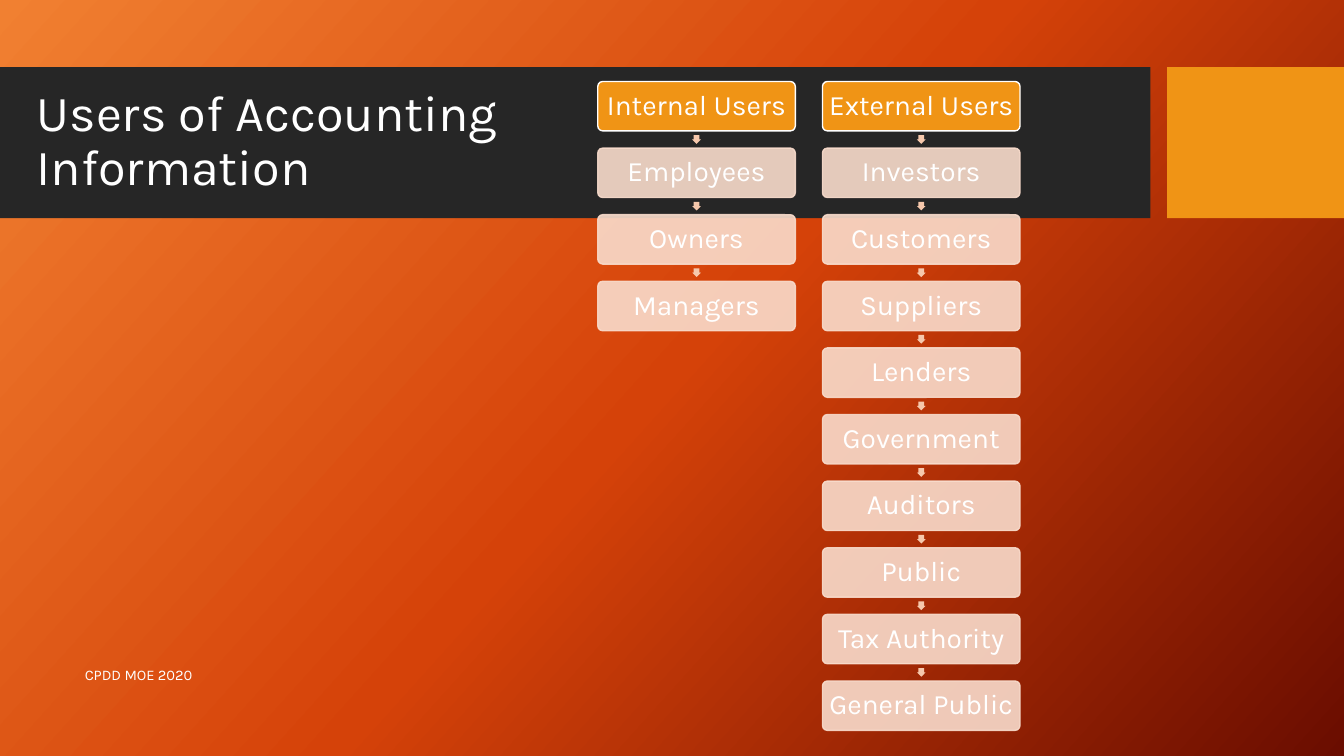
from lxml.etree import SubElement
from pptx import Presentation
from pptx.dml.color import RGBColor
from pptx.enum.shapes import MSO_SHAPE
from pptx.enum.text import MSO_ANCHOR, MSO_AUTO_SIZE, PP_ALIGN
from pptx.oxml.ns import qn
from pptx.util import Pt

WHITE = RGBColor(0xFF, 0xFF, 0xFF)
CHARCOAL = RGBColor(0x26, 0x26, 0x26)
AMBER = RGBColor(0xF0, 0x94, 0x15)
PEACH = RGBColor(0xF9, 0xDC, 0xCC)
ARROW_PEACH = RGBColor(0xF6, 0xC8, 0xAC)
BACKGROUND_STOPS = [
    (0, RGBColor(0xF1, 0x80, 0x31)),
    (50, RGBColor(0xD5, 0x42, 0x09)),
    (100, RGBColor(0x6A, 0x0D, 0x00)),
]

USERS = [
    ["Internal Users", "Employees", "Owners", "Managers"],
    ["External Users", "Investors", "Customers", "Suppliers", "Lenders",
     "Government", "Auditors", "Public", "Tax Authority", "General Public"],
]
COLUMN_LEFTS = [427, 587.5]
FIRST_TOP, PITCH = 58.2, 47.58
CARD_WIDTH, CARD_HEIGHT = 141.1, 35.3
ARROW_SIZE = 6.2


class SlideBuilder:
    """Holds the text style and the current slide."""

    font_name = "Karla"
    text_color = WHITE

    def __init__(self, slide):
        self.slide = slide

    def background(self, stops, angle):
        fill = self.slide.background.fill
        fill.gradient()
        fill.gradient_angle = angle
        stop_list = next(self.slide.element.iter(qn("a:gsLst")))
        stop_list.clear()
        for percent, color in stops:
            stop = SubElement(stop_list, qn("a:gs"), pos=str(percent * 1000))
            SubElement(stop, qn("a:srgbClr"), val=str(color))

    def set_text(self, shape, text, size, alignment, margins, line_spacing=None):
        frame = shape.text_frame
        side, edge = Pt(margins[0]), Pt(margins[1])
        frame_format = {
            "auto_size": MSO_AUTO_SIZE.NONE, "word_wrap": True,
            "vertical_anchor": MSO_ANCHOR.MIDDLE,
            "margin_left": side, "margin_right": side,
            "margin_top": edge, "margin_bottom": edge,
        }
        for name, value in frame_format.items():
            setattr(frame, name, value)
        paragraph = frame.paragraphs[0]
        paragraph.alignment = alignment
        paragraph.line_spacing = line_spacing
        run = paragraph.add_run()
        run.text = text
        for name, value in {"name": self.font_name, "size": Pt(size)}.items():
            setattr(run.font, name, value)
        run.font.color.rgb = self.text_color

    def title(self, text, left, top, width, height, size):
        shape = self.slide.shapes.title
        position = {"left": left, "top": top, "width": width, "height": height}
        for name, value in position.items():
            setattr(shape, name, Pt(value))
        self.set_text(shape, text, size, PP_ALIGN.LEFT, (7.2, 3.6), 0.9)

    def text(self, text, left, top, width, height, size):
        box = self.slide.shapes.add_textbox(
            Pt(left), Pt(top), Pt(width), Pt(height))
        self.set_text(box, text, size, PP_ALIGN.LEFT, (7.2, 3.6))

    def shape(self, kind, left, top, width, height, fill):
        shape = self.slide.shapes.add_shape(
            kind, Pt(left), Pt(top), Pt(width), Pt(height))
        shape.shadow.inherit = False
        shape.fill.solid()
        shape.fill.fore_color.rgb = fill
        shape.line.fill.background()
        return shape

    def band(self, left, top, width, height, fill):
        band = self.shape(MSO_SHAPE.RECTANGLE, left, top, width, height, fill)
        # Bands sit behind the title placeholder
        band.element.getparent().insert(2, band.element)

    def card(self, text, left, top, fill, outline, opacity):
        card = self.shape(MSO_SHAPE.ROUNDED_RECTANGLE, left, top,
                          CARD_WIDTH, CARD_HEIGHT, fill)
        card.adjustments[0] = 0.1
        card.line.color.rgb = outline
        card.line.width = Pt(1)
        if opacity < 100:
            for color in card.element.spPr.iter(qn("a:srgbClr")):
                SubElement(color, qn("a:alpha"), val=str(opacity * 1000))
        self.set_text(card, text, 20, PP_ALIGN.CENTER, (3, 3), 0.9)

    def arrow(self, left, top):
        arrow = self.shape(MSO_SHAPE.RIGHT_ARROW, left, top,
                           ARROW_SIZE, ARROW_SIZE, ARROW_PEACH)
        arrow.rotation = 90
        arrow.adjustments[0] = 0.67
        arrow.adjustments[1] = 0.5


def main():
    presentation = Presentation()
    presentation.slide_width = Pt(960)
    presentation.slide_height = Pt(540)
    builder = SlideBuilder(
        presentation.slides.add_slide(presentation.slide_layouts[5]))

    # Background, bands and title
    builder.background(BACKGROUND_STOPS, 318)
    builder.band(0, 48, 821.8, 107.8, CHARCOAL)
    builder.band(833.6, 48, 126.4, 107.8, AMBER)
    builder.title("Users of Accounting Information", 19, 59, 384, 85, 36)

    # User columns: an amber heading, then peach cards joined by arrows
    for left, names in zip(COLUMN_LEFTS, USERS):
        for row, name in enumerate(names):
            top = FIRST_TOP + row * PITCH
            if row == 0:
                builder.card(name, left, top, AMBER, WHITE, 100)
            else:
                gap_middle = top - (PITCH - CARD_HEIGHT) / 2
                builder.arrow(left + (CARD_WIDTH - ARROW_SIZE) / 2,
                              gap_middle - ARROW_SIZE / 2)
                builder.card(name, left, top, PEACH, PEACH, 90)

    # Footer
    builder.text("CPDD MOE 2020", 53.5, 467.5, 540.5, 28.8, 10.5)

    presentation.save("out.pptx")


if __name__ == "__main__":
    main()
